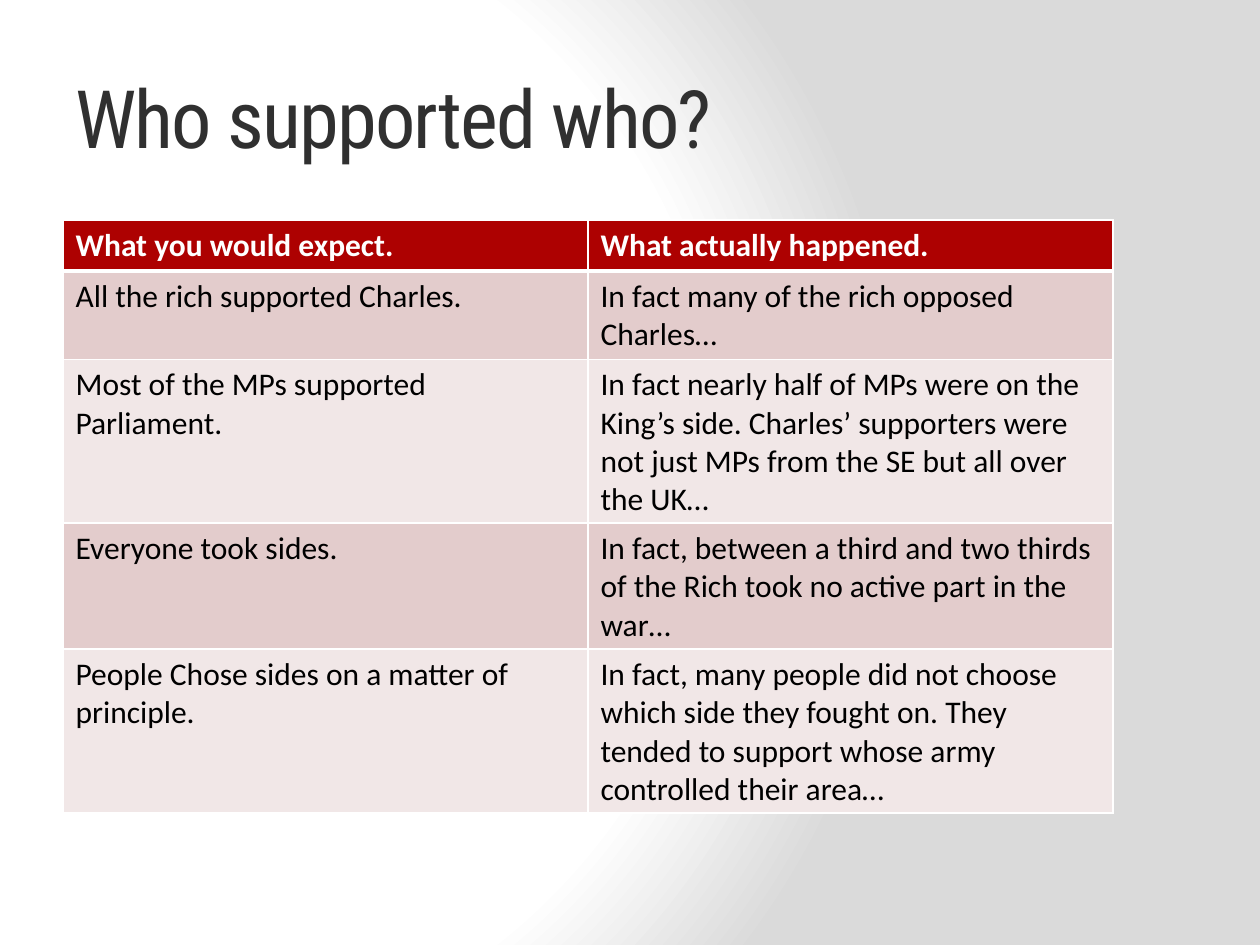
"""Build the slide comparing expected and actual sides in the Civil War."""
from pptx import Presentation
from pptx.dml.color import RGBColor
from pptx.enum.text import MSO_ANCHOR
from pptx.oxml import parse_xml
from pptx.oxml.ns import nsdecls, qn
from pptx.util import Emu, Pt

MIDDLE = MSO_ANCHOR.MIDDLE
SCALE = 914400 / 126
THEME = {
    "title": {"name": "Roboto Condensed", "size": Pt(46), "color": "303030"},
    "header": {"name": "Calibri", "size": Pt(18), "bold": True, "color": "FFFFFF"},
    "body": {"name": "Calibri", "size": Pt(18), "bold": False, "color": "000000"},
    "header_fill": "AD0101",
    "bands": ["E3CCCC", "F1E7E7"],
    "border": "FFFFFF",
    "background": [(0, "FFFFFF"), (75, "FFFFFF"), (100, "DADADA")],
}
ROWS = [
    ("What you would expect.", "What actually happened."),
    ("All the rich supported Charles.", "In fact many of the rich opposed Charles…"),
    ("Most of the MPs supported Parliament.",
     "In fact nearly half of MPs were on the King’s side. Charles’ supporters were "
     "not just MPs from the SE but all over the UK…"),
    ("Everyone took sides.",
     "In fact, between a third and two thirds of the Rich took no active part in the war…"),
    ("People Chose sides on a matter of principle.",
     "In fact, many people did not choose which side they fought on. They tended to "
     "support whose army controlled their area…"),
]


def px(length):
    return Emu(round(length * SCALE))


def write(frame, text, style):
    span = frame.paragraphs[0].add_run()
    span.text = text
    for name, value in style.items():
        if name == "color":
            span.font.color.rgb = RGBColor.from_string(value)
        else:
            setattr(span.font, name, value)
    return span


deck = Presentation()
deck.slide_width, deck.slide_height = px(1260), px(945)
page = deck.slides.add_slide(deck.slide_layouts[6])

page.background.fill.gradient()
gradient = page.element.find(".//" + qn("a:gradFill"))
stops = "".join(
    f'<a:gs pos="{position * 1000}"><a:srgbClr val="{color}"/></a:gs>'
    for position, color in THEME["background"]
)
gradient.getparent().replace(gradient, parse_xml(
    f'<a:gradFill {nsdecls("a")} rotWithShape="1"><a:gsLst>{stops}</a:gsLst>'
    '<a:path path="circle"><a:fillToRect l="20000" t="50000" r="100000" b="50000"/>'
    '</a:path></a:gradFill>'
))

title_box = page.shapes.add_textbox(px(63), px(38), px(1050), px(157))
title_box.text_frame.word_wrap = True
title_box.text_frame.vertical_anchor = MIDDLE
title_span = write(title_box.text_frame, "Who supported who?", THEME["title"])
title_span.font._element.set("spc", "-100")

table_frame = page.shapes.add_table(len(ROWS), 2, px(63), px(220), px(1050), px(593))
table = table_frame.table
for row_index, texts in enumerate(ROWS):
    table.rows[row_index].height = px(51)
    is_header = row_index == 0
    fill = THEME["header_fill"] if is_header else THEME["bands"][(row_index - 1) % 2]
    style = THEME["header" if is_header else "body"]
    borders = {"lnL": 1, "lnR": 1, "lnT": 3 if row_index == 1 else 1,
               "lnB": 3 if is_header else 1}
    for column_index, text in enumerate(texts):
        cell = table.cell(row_index, column_index)
        write(cell.text_frame, text, style)
        cell.fill.solid()
        cell.fill.fore_color.rgb = RGBColor.from_string(fill)
        properties = cell._tc.get_or_add_tcPr()
        for order, (side, width) in enumerate(borders.items()):
            properties.insert(order, parse_xml(
                f'<a:{side} {nsdecls("a")} w="{Pt(width)}"><a:solidFill>'
                f'<a:srgbClr val="{THEME["border"]}"/></a:solidFill></a:{side}>'
            ))
table_frame.height = px(593)

deck.save("out.pptx")
